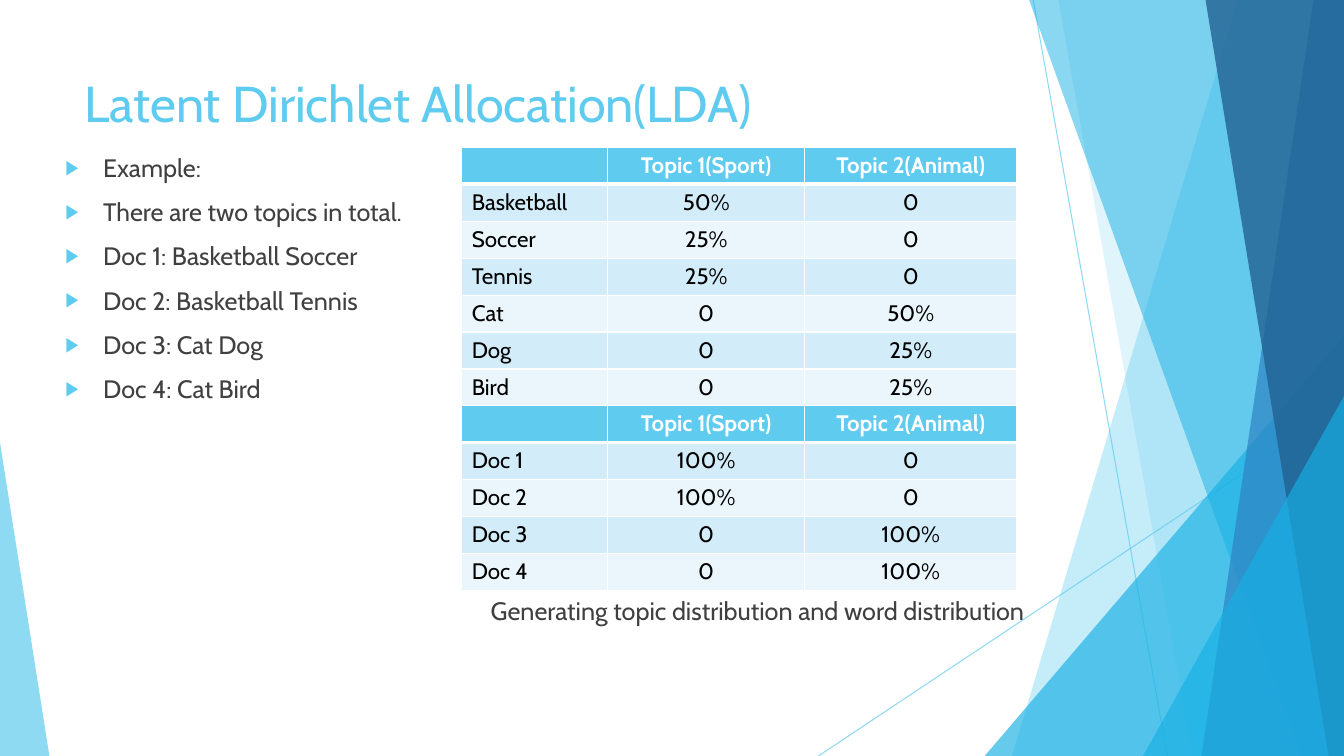
import lxml.etree
import pptx
import pptx.dml.color
import pptx.enum.shapes
import pptx.enum.text
import pptx.oxml.ns
import pptx.util

Pt = pptx.util.Pt
ALIGN = pptx.enum.text.PP_ALIGN
SKY, CYAN, BLUE, NAVY = "5FCBEF", "17B0E4", "2E83C3", "226292"
GREY, BLACK, WHITE = "404040", "000000", "FFFFFF"
STRIPES = ["D2ECF9", "EAF6FC"]
FONT = "Cabin"

BANDS = [
    ("band", 884.2, 722.9, SKY, 36),
    ("band", 756, 851.8, SKY, 20),
    ("triangle", 703.4, 239.8, 256.6, 1, CYAN, 66),
    ("band", 735.1, 929.5, CYAN, 50),
    ("band", 938.2, 858.2, BLUE, 70),
    ("band", 861.1, 949, NAVY, 80),
    ("triangle", 816.5, 283, 143.5, 1, CYAN, 66),
    ("triangle", 0, 316.1, 35.3, 0, SKY, 70),
]
LINES = [(738, 0, 833.8, 540), (960, 290.2, 584.6, 540)]
EXAMPLES = [
    "Example:",
    "There are two topics in total.",
    "Doc 1: Basketball Soccer",
    "Doc 2: Basketball Tennis",
    "Doc 3: Cat Dog",
    "Doc 4: Cat Bird",
]
HEADER = ["", "Topic 1(Sport)", "Topic 2(Animal)"]
WORDS = [
    ["Basketball", "50%", "0"],
    ["Soccer", "25%", "0"],
    ["Tennis", "25%", "0"],
    ["Cat", "0", "50%"],
    ["Dog", "0", "25%"],
    ["Bird", "0", "25%"],
]
DOCS = [
    ["Doc 1", "100%", "0"],
    ["Doc 2", "100%", "0"],
    ["Doc 3", "0", "100%"],
    ["Doc 4", "0", "100%"],
]


def set_color(fmt, color, alpha=100):
    """Give a fill a solid colour with an opacity in percent."""
    fmt.solid()
    fmt.fore_color.rgb = pptx.dml.color.RGBColor.from_string(color)
    if alpha < 100:
        for clr in fmt._xPr.iter(pptx.oxml.ns.qn("a:srgbClr")):
            add_element(clr, "alpha", val=alpha * 1000)


def add_element(parent, tag, **attrs):
    """Append a drawing element with attributes and return it."""
    el = lxml.etree.SubElement(parent, pptx.oxml.ns.qn(f"a:{tag}"))
    for name, value in attrs.items():
        el.set(name, str(value))
    return el


def set_font(p, size, color, bold=False):
    """Set the font of a whole paragraph."""
    p.font.name, p.font.size, p.font.bold = FONT, Pt(size), bold
    set_color(p.font.fill, color)


def add_band(s, box, top_x, bottom_x, color, alpha):
    """Draw a slanted band that reaches the right edge of the box."""
    x, y, w, h = box
    fb = s.shapes.build_freeform(Pt(x + top_x), Pt(y))
    fb.add_line_segments([(Pt(x + w), Pt(y)), (Pt(x + w), Pt(y + h)),
                          (Pt(x + bottom_x), Pt(y + h))])
    finish_shape(fb.convert_to_shape(), color, alpha)


def add_triangle(s, box, left, top, width, apex, color, alpha):
    """Draw a triangle that stands on the bottom of the box."""
    x, y, w, h = box
    sp = s.shapes.add_shape(pptx.enum.shapes.MSO_SHAPE.ISOSCELES_TRIANGLE,
                            Pt(x + left), Pt(y + top), Pt(width), Pt(h - top))
    sp.adjustments[0] = apex
    finish_shape(sp, color, alpha)


def finish_shape(sp, color, alpha):
    """Fill a shape and remove its outline and shadow."""
    sp.shadow.inherit = False
    set_color(sp.fill, color, alpha)
    sp.line.fill.background()


def add_decoration(s, box):
    """Draw the thin lines and translucent facets around the box edges."""
    x, y = box[:2]
    for x1, y1, x2, y2 in LINES:
        line = s.shapes.add_connector(pptx.enum.shapes.MSO_CONNECTOR.STRAIGHT,
                                      Pt(x + x1), Pt(y + y1), Pt(x + x2), Pt(y + y2))
        line.line.width = Pt(0.75)
        set_color(line.line.fill, SKY, 70)
        add_element(line._element.spPr, "effectLst")
    for kind, *args in BANDS:
        draw = add_band if kind == "band" else add_triangle
        draw(s, box, *args)


def add_text(s, box, lines, size, color, align=ALIGN.LEFT, bullets=False):
    """Write paragraphs in the box, with arrow bullets on request."""
    tf = s.shapes.add_textbox(*map(Pt, box)).text_frame
    tf.word_wrap = True
    for i, text in enumerate(lines):
        p = tf.add_paragraph() if i else tf.paragraphs[0]
        p.text, p.alignment = text, align
        if i:
            p.space_before = Pt(10)
        if bullets:
            pPr = p._p.get_or_add_pPr()
            pPr.set("marL", str(Pt(27)))
            pPr.set("indent", str(Pt(-27)))
            add_element(add_element(pPr, "buClr"), "srgbClr", val=SKY)
            add_element(pPr, "buSzPct", val=80000)
            add_element(pPr, "buFont", typeface="Arial")
            add_element(pPr, "buChar", char="▶")
        set_font(p, size, color)


def set_borders(cell, top, bottom):
    """Draw white cell borders ahead of the cell fill."""
    tcPr = cell._tc.get_or_add_tcPr()
    for i, (side, width) in enumerate(zip("LRTB", (1, 1, top, bottom))):
        ln = add_element(tcPr, f"ln{side}", w=Pt(width))
        add_element(add_element(ln, "solidFill"), "srgbClr", val=WHITE)
        tcPr.insert(i, ln)


def add_distribution(s, box, body):
    """Fill the box with a striped table of topic shares."""
    rows = [HEADER] + body
    table = s.shapes.add_table(len(rows), len(HEADER), *map(Pt, box)).table
    for col, width in zip(table.columns, (104.4, 140.4, 151.9)):
        col.width = Pt(width)
    for r, values in enumerate(rows):
        table.rows[r].height = Pt(box[3] / len(rows))
        for c, text in enumerate(values):
            cell = table.cell(r, c)
            set_color(cell.fill, STRIPES[(r - 1) % 2] if r else SKY)
            set_borders(cell, 3 if r == 1 else 1, 1 if r else 3)
            p = cell.text_frame.paragraphs[0]
            p.text = text
            p.alignment = ALIGN.CENTER if c else ALIGN.LEFT
            set_font(p, 16, BLACK if r else WHITE, bold=r == 0)


def main():
    """Build the slide and save it."""
    prs = pptx.Presentation()
    prs.slide_width, prs.slide_height = Pt(960), Pt(540)
    s = prs.slides.add_slide(prs.slide_layouts[6])
    add_decoration(s, (0, 0, 960, 540))
    add_text(s, (53.3, 48.2, 676.8, 103.7), ["Latent Dirichlet Allocation(LDA)"], 36, SKY)
    add_text(s, (39.6, 105.1, 285, 200), EXAMPLES, 18, GREY, bullets=True)
    add_text(s, (329.8, 421.5, 408.9, 30),
             ["Generating topic distribution and word distribution"], 18, GREY, ALIGN.RIGHT)
    add_distribution(s, (329.8, 105.1, 396.7, 185), WORDS)
    add_distribution(s, (329.8, 289.6, 396.7, 132), DOCS)
    prs.save("out.pptx")


if __name__ == "__main__":
    main()
